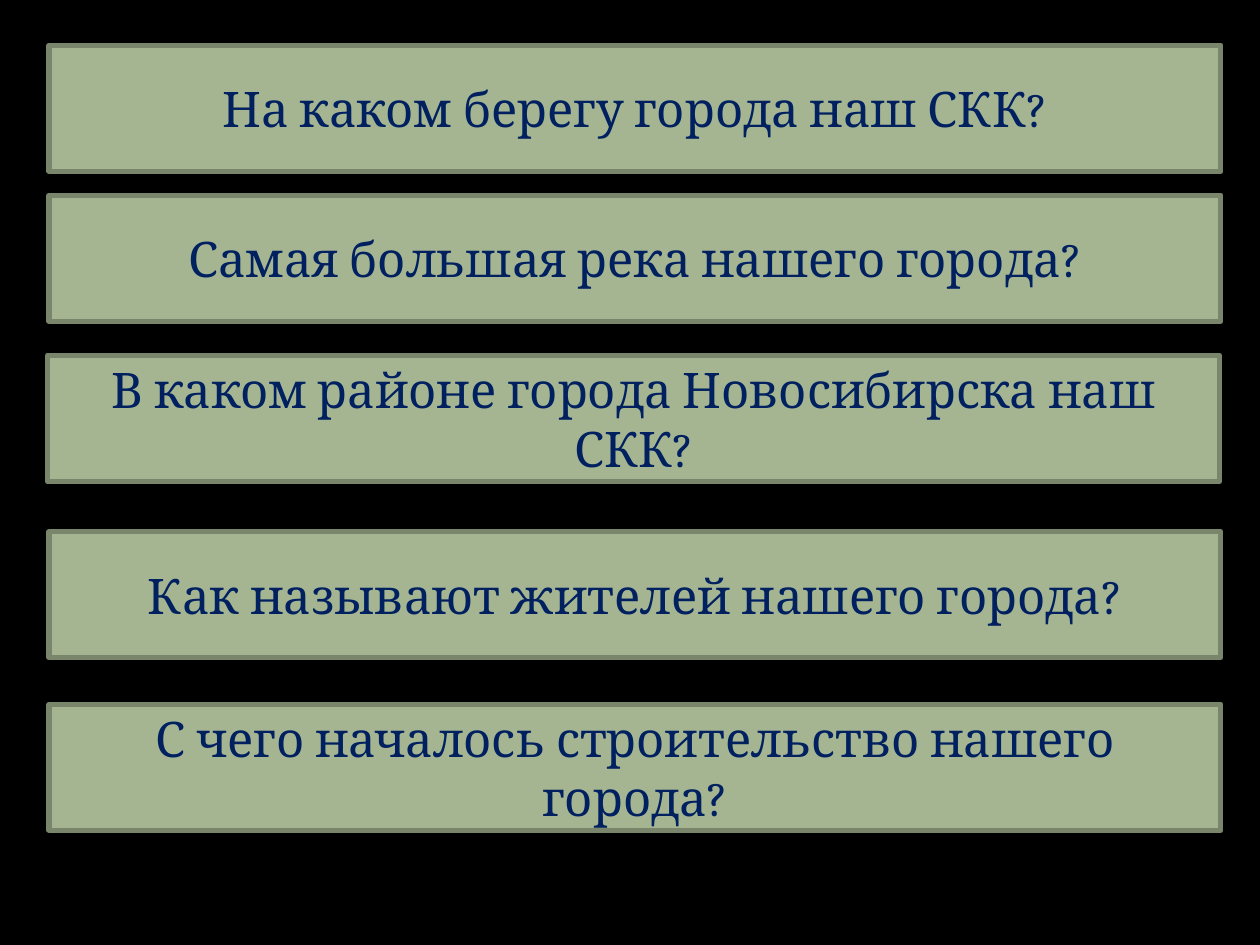
from pptx import Presentation
from pptx.dml.color import RGBColor
from pptx.enum.shapes import MSO_SHAPE
from pptx.enum.text import MSO_ANCHOR, PP_ALIGN
from pptx.util import Inches, Pt

RECTANGLE = MSO_SHAPE.RECTANGLE
MIDDLE = MSO_ANCHOR.MIDDLE
CENTER = PP_ALIGN.CENTER

BLACK = RGBColor(0x00, 0x00, 0x00)
SAGE = RGBColor(0xA5, 0xB5, 0x92)
DARK_SAGE = RGBColor(0x7A, 0x86, 0x6C)
NAVY = RGBColor(0x00, 0x20, 0x60)

# Each question with its left and top position in inches
QUESTIONS = [
    ("На каком берегу города наш СКК?", 0.39, 0.36),
    ("Самая большая река нашего города?", 0.39, 1.55),
    ("В каком районе города Новосибирска наш СКК?", 0.38, 2.82),
    ("Как называют жителей нашего города?", 0.39, 4.22),
    ("С чего началось строительство нашего города?", 0.39, 5.59),
]

# Blank slide with a black background
deck = Presentation()
deck.slide_width = Inches(10)
deck.slide_height = Inches(7.5)
slide = deck.slides.add_slide(deck.slide_layouts[6])
slide.background.fill.solid()
slide.background.fill.fore_color.rgb = BLACK

# Question boxes
for question, left, top in QUESTIONS:
    box = slide.shapes.add_shape(
        RECTANGLE, Inches(left), Inches(top), Inches(9.3), Inches(1))
    box.shadow.inherit = False
    box.fill.solid()
    box.fill.fore_color.rgb = SAGE
    box.line.color.rgb = DARK_SAGE
    box.line.width = Pt(3)

    frame = box.text_frame
    frame.word_wrap = True
    frame.vertical_anchor = MIDDLE
    para = frame.paragraphs[0]
    para.alignment = CENTER
    span = para.add_run()
    span.text = question
    span.font.name = "Cambria"
    span.font.size = Pt(28)
    span.font.color.rgb = NAVY

deck.save("out.pptx")
